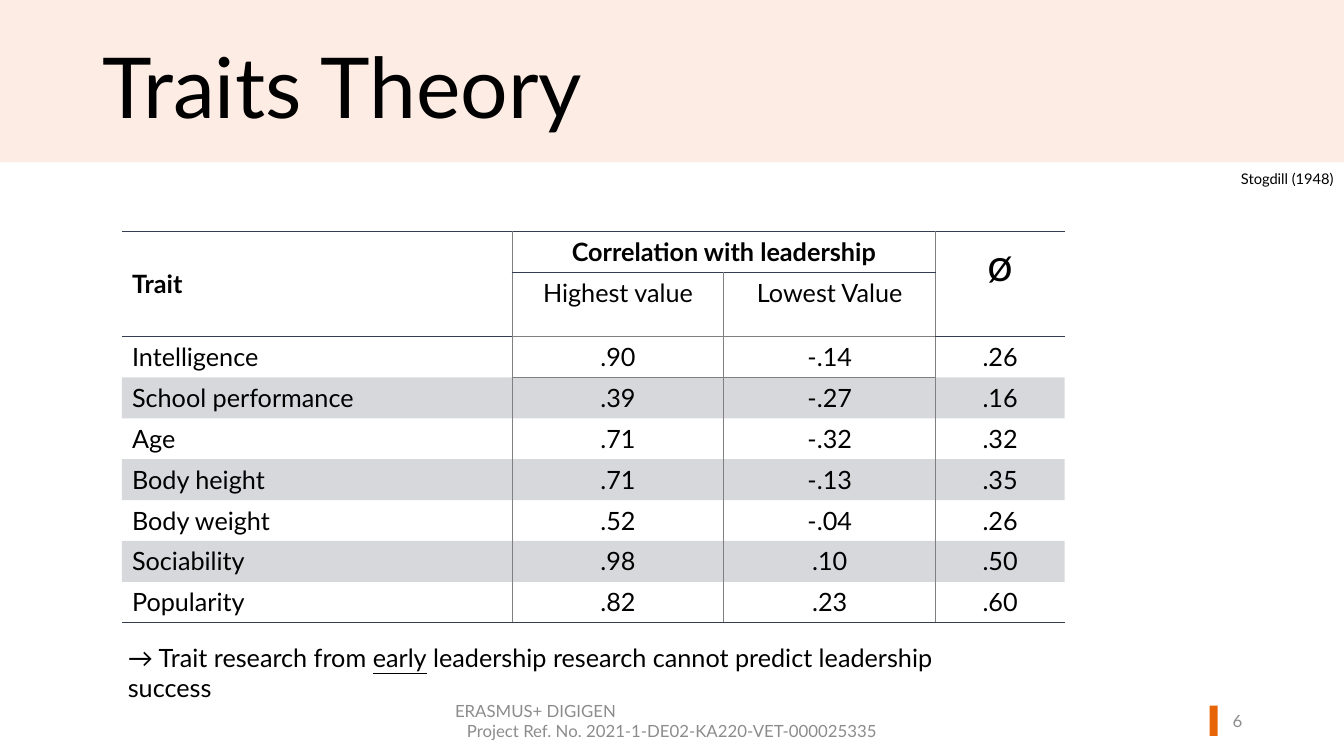
from lxml import etree
from pptx import Presentation
from pptx import util as u
from pptx.dml.color import RGBColor
from pptx.enum import shapes, text
from pptx.oxml.ns import qn

WIDTH, HEIGHT = 13.33, 7.5
FONT = "Lato"
COLOURS = {"band": "FDECE3", "accent": "E86507", "ink": "000000",
           "muted": "8C8C8C", "navy": "333F50", "grid": "808080"}
COLUMNS = [3.87, 2.1, 2.1, 1.28]
ROWS = [
    ["Trait", "Correlation with leadership", "", "ø"],
    ["", "Highest value", "Lowest Value", ""],
    ["Intelligence", ".90", "-.14", ".26"],
    ["School performance", ".39", "-.27", ".16"],
    ["Age", ".71", "-.32", ".32"],
    ["Body height", ".71", "-.13", ".35"],
    ["Body weight", ".52", "-.04", ".26"],
    ["Sociability", ".98", ".10", ".50"],
    ["Popularity", ".82", ".23", ".60"],
]


def inches(box):
    return [u.Inches(length) for length in box]


def colour(name):
    return RGBColor.from_string(COLOURS[name])


def style(run, size, ink="ink", bold=False):
    run.font.size, run.font.name, run.font.bold = u.Pt(size), FONT, bold
    run.font.color.rgb = colour(ink)


def add_block(slide, box, fill):
    block = slide.shapes.add_shape(shapes.MSO_SHAPE.RECTANGLE, *inches(box))
    block.shadow.inherit = False
    block.fill.solid()
    block.fill.fore_color.rgb = colour(fill)
    block.line.fill.background()
    return block


def add_words(slide, box, lines, size, ink="ink", align=None, middle=False, wrap=True):
    """Each line is a list of runs."""
    frame = slide.shapes.add_textbox(*inches(box)).text_frame
    frame.word_wrap = wrap
    if middle:
        frame.vertical_anchor = text.MSO_ANCHOR.MIDDLE
    for number, line in enumerate(lines):
        paragraph = frame.paragraphs[0] if number == 0 else frame.add_paragraph()
        paragraph.alignment = align
        for words in line:
            run = paragraph.add_run()
            run.text = words
            style(run, size, ink)
    return frame


def add_header(slide, box):
    left, top, width, height = box
    band = add_block(slide, box, "band")
    slide.shapes._spTree.insert(2, band._element)  # behind the title
    title = slide.shapes.title
    title.left, title.top, title.width, title.height = inches(
        (left + 0.92, top + 0.41, 9.93, 0.85))
    frame = title.text_frame
    frame.text = "Traits Theory"
    frame.auto_size = text.MSO_AUTO_SIZE.NONE
    frame.vertical_anchor = text.MSO_ANCHOR.TOP
    paragraph = frame.paragraphs[0]
    paragraph.alignment, paragraph.line_spacing = text.PP_ALIGN.LEFT, 0.9
    style(paragraph.runs[0], 60)
    add_words(slide, (left + width - 1.12, top + height + 0.03, 1.12, 0.28),
              [["Stogdill (1948)"]], 10.5, wrap=False)


def cell_borders(row, column):
    """Line colour for the left, right, top and bottom of a cell."""
    middle = column in (1, 2)
    rules = {0: "navy" if middle else None, 1: "grid" if middle else "navy",
             2: "grid" if middle else None, len(ROWS) - 1: "navy"}
    return {"L": "grid" if column > 0 and (row, column) != (0, 2) else None,
            "R": "grid" if column < 3 and (row, column) != (0, 1) else None,
            "T": "navy" if row == 0 else rules.get(row - 1),
            "B": rules.get(row)}


def set_borders(cell, borders):
    properties = cell._tc.get_or_add_tcPr()
    for position, (side, name) in enumerate(borders.items()):
        line = etree.Element(qn(f"a:ln{side}"), w=str(u.Pt(1)))
        if name:
            solid = etree.SubElement(line, qn("a:solidFill"))
            etree.SubElement(solid, qn("a:srgbClr"), val=COLOURS[name])
        else:
            etree.SubElement(line, qn("a:noFill"))
        properties.insert(position, line)


def set_stripe(cell, striped):
    if not striped:
        cell.fill.background()
        return
    cell.fill.solid()
    cell.fill.fore_color.rgb = colour("navy")
    shade = cell._tc.tcPr.find(".//" + qn("a:srgbClr"))
    etree.SubElement(shade, qn("a:alpha"), val="20000")


def add_traits_table(slide, box):
    table = slide.shapes.add_table(len(ROWS), len(COLUMNS), *inches(box)).table
    for column, width in zip(table.columns, COLUMNS):
        column.width = u.Inches(width)
    for first, last in [((0, 0), (1, 0)), ((0, 1), (0, 2)), ((0, 3), (1, 3))]:
        table.cell(*first).merge(table.cell(*last))
    for row, values in enumerate(ROWS):
        for column, value in enumerate(values):
            cell = table.cell(row, column)
            set_stripe(cell, row > 2 and row % 2 == 1)
            set_borders(cell, cell_borders(row, column))
            if not value:
                continue
            cell.text_frame.text = value
            paragraph = cell.text_frame.paragraphs[0]
            paragraph.alignment = text.PP_ALIGN.CENTER if column else text.PP_ALIGN.LEFT
            style(paragraph.runs[0], 32 if value == "ø" else 18,
                  bold=row == 0 and column < 3)
    table.cell(0, 0).vertical_anchor = text.MSO_ANCHOR.MIDDLE


def add_conclusion(slide, box):
    frame = add_words(slide, box, [[
        "→ Trait research from ", "early",
        " leadership research cannot predict leadership success"]], 18)
    frame.paragraphs[0].runs[1].font.underline = True


def add_footer(slide, box):
    left, top, width, height = box
    project = add_words(slide, (left + (width - 4.5) / 2, top, 4.5, height),
                        [["ERASMUS+ DIGIGEN"],
                         ["Project Ref. No. 2021-1-DE02-KA220-VET-000025335"]],
                        12, "muted", text.PP_ALIGN.CENTER, middle=True)
    project.paragraphs[0].alignment = text.PP_ALIGN.LEFT
    add_block(slide, (left + 0.9 * width, top + 0.05, 0.08, 0.3), "accent")
    add_words(slide, (left + 11.77, top, 0.65, height), [["6"]], 12, "muted",
              text.PP_ALIGN.RIGHT, middle=True)


def main():
    deck = Presentation()
    deck.slide_width, deck.slide_height = inches((WIDTH, HEIGHT))
    slide = deck.slides.add_slide(deck.slide_layouts[5])  # title only
    add_header(slide, (0, 0, WIDTH, 1.61))
    add_traits_table(slide, (1.21, 2.3, sum(COLUMNS), 3.65))
    add_conclusion(slide, (1.17, 6.32, 8.96, 0.4))
    add_footer(slide, (0, 6.95, WIDTH, 0.4))
    deck.save("out.pptx")


if __name__ == "__main__":
    main()
